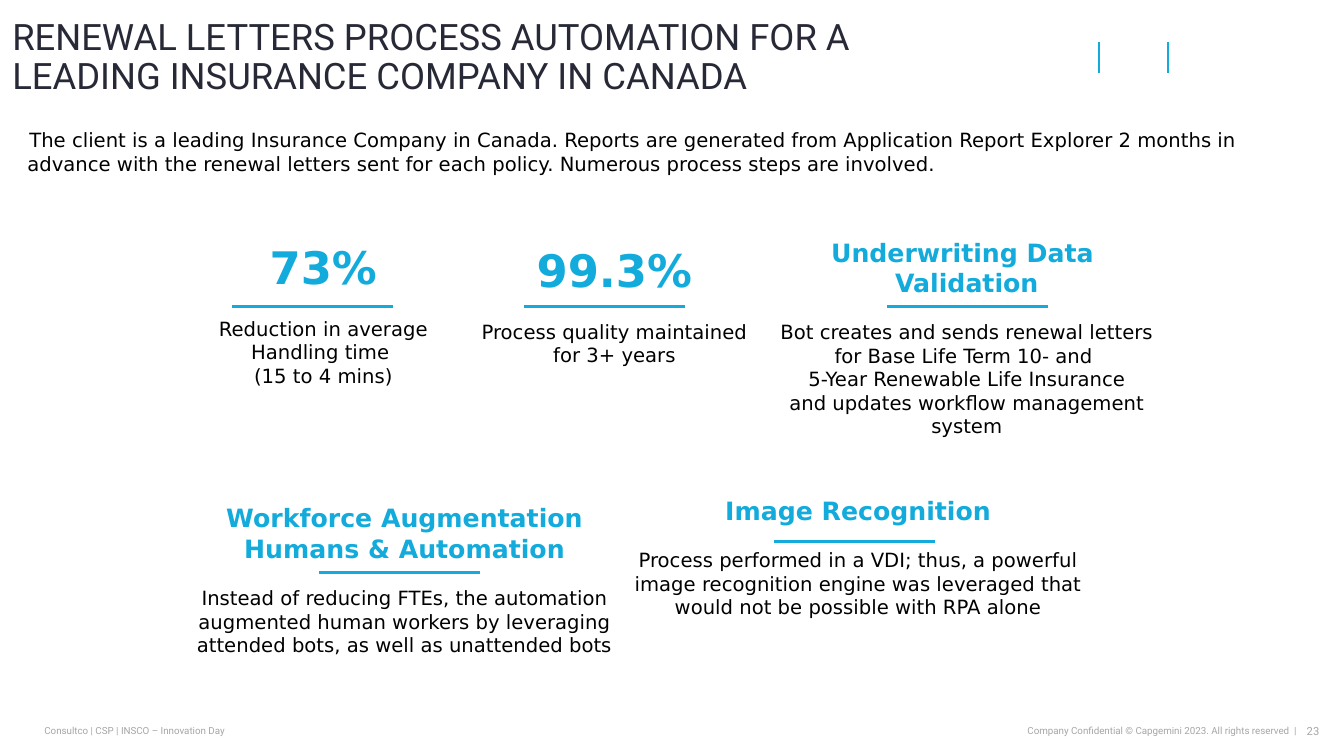
from pptx import Presentation
from pptx.dml.color import RGBColor
from pptx.enum.shapes import MSO_CONNECTOR
from pptx.enum.text import MSO_ANCHOR, PP_ALIGN
from pptx.util import Cm, Pt
from lxml import etree

STRAIGHT = MSO_CONNECTOR.STRAIGHT
TOP, MIDDLE, BOTTOM = MSO_ANCHOR.TOP, MSO_ANCHOR.MIDDLE, MSO_ANCHOR.BOTTOM
LEFT, CENTER, RIGHT = PP_ALIGN.LEFT, PP_ALIGN.CENTER, PP_ALIGN.RIGHT

CYAN = RGBColor(0x12, 0xAB, 0xDB)
BLACK = RGBColor(0, 0, 0)
NAVY = RGBColor(0x27, 0x29, 0x36)
GREY = RGBColor(0xA6, 0xA6, 0xA6)
BODY_FONT, BRAND_FONT = "DejaVu Sans", "Roboto"
DRAWING_NS = "http://schemas.openxmlformats.org/drawingml/2006/main"

RULE_WIDTH = 4.06
BODY_GAP = Pt(16.3)

HIGHLIGHTS = [
    ((5.38, 6.05, 5.54, 3.76), "73%", 32,
     ["Reduction in average", "Handling time ", "(15 to 4 mins)"], (0.46, 1.68)),
    ((12.12, 6.12, 6.73, 3.76), "99.3%", 32,
     ["Process quality maintained", "for 3+ years"], (1.09, 1.6)),
    ((18.03, 5.97, 12.67, 5.74), "Underwriting Data \vValidation", 18,
     ["Bot creates and sends renewal letters", "for Base Life Term 10- and ",
      "5-Year Renewable Life Insurance", "and updates workflow management",
      "system"], (4.32, 1.75)),
    ((4.52, 12.67, 11.35, 4.01), "Workforce Augmentation\vHumans & Automation", 18,
     ["Instead of reducing FTEs, the automation augmented human workers by "
      "leveraging attended bots, as well as unattended bots"], (3.51, 1.75)),
    ((15.95, 12.47, 11.35, 3.18), "Image Recognition", 18,
     ["Process performed in a VDI; thus, a powerful image recognition engine "
      "was leveraged that would not be possible with RPA alone"], (3.56, 1.17)),
]


def add_frame(slide, box, anchor=TOP, inset_top=0):
    frame = slide.shapes.add_textbox(*map(Cm, box)).text_frame
    frame.word_wrap = True
    frame.vertical_anchor = anchor
    frame.margin_left = frame.margin_right = frame.margin_bottom = 0
    frame.margin_top = Cm(inset_top)
    return frame


def write(paragraph, text, size, color, font=BODY_FONT, align=LEFT, bold=False):
    paragraph.text = text
    paragraph.alignment = align
    paragraph.font.name = font
    paragraph.font.size = Pt(size)
    paragraph.font.bold = bold
    paragraph.font.color.rgb = color


def add_rule(slide, start, end, width):
    rule = slide.shapes.add_connector(STRAIGHT, *map(Cm, start + end))
    rule.line.color.rgb = CYAN
    rule.line.width = Pt(width)
    etree.SubElement(rule._element.spPr, f"{{{DRAWING_NS}}}effectLst")


def add_header(slide, box):
    left, top, width, height = box
    title = add_frame(slide, box, BOTTOM).paragraphs[0]
    write(title, "RENEWAL LETTERS PROCESS AUTOMATION FOR A \v"
          "LEADING INSURANCE COMPANY IN CANADA", 26, NAVY, BRAND_FONT)
    title.line_spacing = 0.9
    for offset in (27.38, 29.13):
        x = left + offset
        add_rule(slide, (x, top + 0.59), (x, top + 1.35), 1.5)


def add_intro(slide, box):
    intro = add_frame(slide, box, inset_top=0.36).paragraphs[0]
    properties = intro._p.get_or_add_pPr()
    for indent in ("marL", "indent"):
        properties.set(indent, str(Cm(0.05)))
    write(intro, "The client is a leading Insurance Company in Canada. Reports are "
          "generated from Application Report Explorer 2 months in advance with the "
          "renewal letters sent for each policy. Numerous process steps are involved.",
          14, BLACK)


def add_highlight(slide, box, heading, heading_size, body, rule_offset):
    frame = add_frame(slide, box)
    write(frame.paragraphs[0], heading, heading_size, CYAN, align=CENTER, bold=True)
    for index, line in enumerate(body):
        paragraph = frame.add_paragraph()
        write(paragraph, line, 14, BLACK, align=CENTER)
        if index == 0:
            paragraph.space_before = BODY_GAP
    x, y = box[0] + rule_offset[0], box[1] + rule_offset[1]
    add_rule(slide, (x, y), (x + RULE_WIDTH, y), 2.25)


def add_footer(slide, box):
    left, top, width, height = box
    parts = [
        (0, 9.47, "Consultco | CSP | INSCO – Innovation Day", 7, LEFT),
        (18.95, 12.6, "Company Confidential © Capgemini 2023. All rights reserved  |",
         7, RIGHT),
        (width - 0.64, 0.64, "23", 8, RIGHT),
    ]
    for offset, part_width, text, size, align in parts:
        frame = add_frame(slide, (left + offset, top, part_width, height), MIDDLE)
        write(frame.paragraphs[0], text, size, GREY, BRAND_FONT, align)


def main():
    deck = Presentation()
    deck.slide_width, deck.slide_height = Cm(33.87), Cm(19.05)
    slide = deck.slides.add_slide(deck.slide_layouts[6])
    add_header(slide, (0.31, 0.48, 30.4, 1.98))
    add_intro(slide, (0.64, 2.87, 32.08, 1.55))
    for highlight in HIGHLIGHTS:
        add_highlight(slide, *highlight)
    add_footer(slide, (1.12, 18.11, 32.13, 0.61))
    deck.save("out.pptx")


if __name__ == "__main__":
    main()
